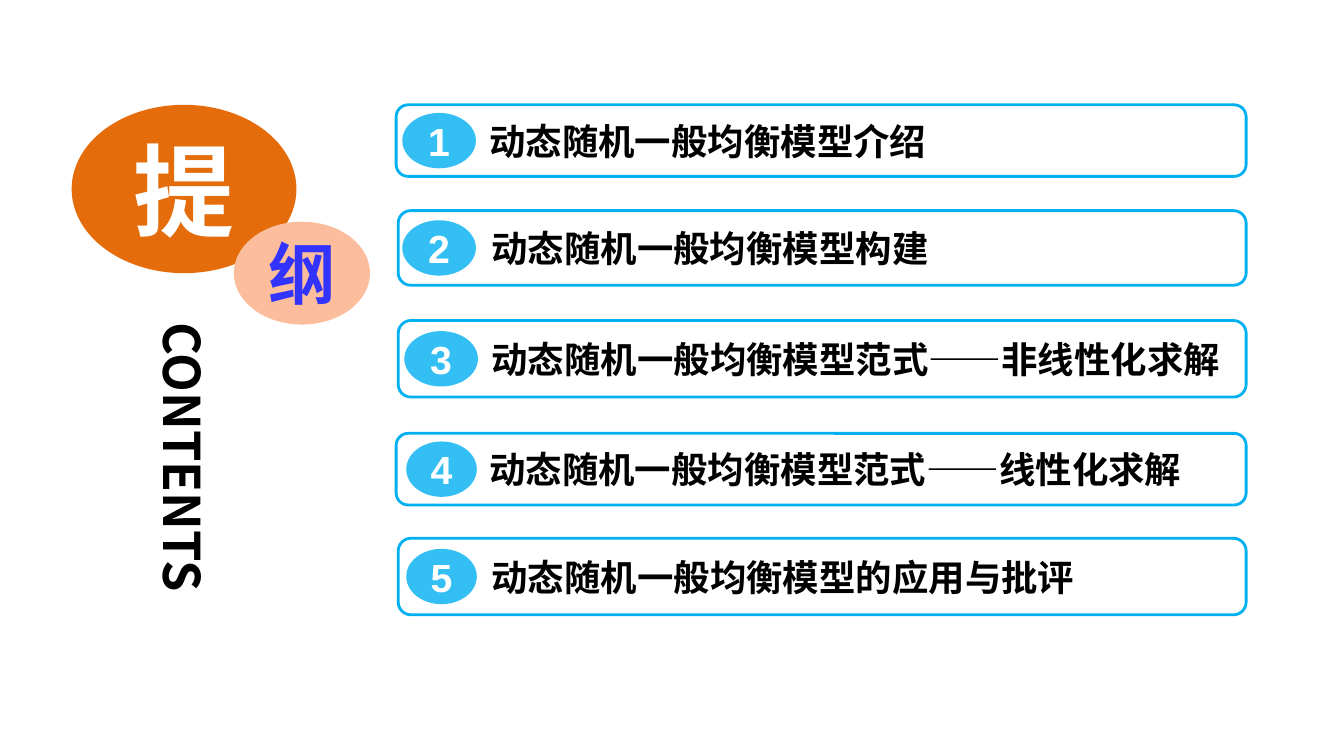
"""Build the outline slide: a round title, a vertical caption and five numbered topics."""
from pptx import Presentation
from pptx.dml.color import RGBColor
from pptx.enum.shapes import MSO_SHAPE
from pptx.enum.text import MSO_ANCHOR, PP_ALIGN
from pptx.oxml.ns import qn
from pptx.util import Inches, Pt
from lxml.etree import SubElement

THEME = {
    "white": "FFFFFF", "black": "000000", "blue": "00B0F0",
    "orange": "E46C0A", "peach": "FBBD9B", "violet": "3333FF",
    "chinese": "Noto Sans CJK SC", "digits": "Arial",
    "title": 72, "subtitle": 48, "caption": 36, "number": 28, "topic": 26,
}
TOPICS = [
    ("动态随机一般均衡模型介绍", 29.48, 13.87, 63.24, 9.47, 29.93, 5.48),
    ("动态随机一般均衡模型构建", 29.63, 27.87, 63.09, 9.87, 29.93, 5.48),
    ("动态随机一般均衡模型范式——非线性化求解", 29.63, 42.4, 63.09, 10.13, 30.08, 5.48),
    ("动态随机一般均衡模型范式——线性化求解", 29.48, 57.33, 63.24, 9.47, 30.23, 5.25),
    ("动态随机一般均衡模型的应用与批评", 29.63, 71.2, 63.09, 10.13, 30.23, 5.25),
]
DISC_HEIGHT = 7.33

deck = Presentation()
deck.slide_width, deck.slide_height = Inches(13.33), Inches(7.5)
page = deck.slides.add_slide(deck.slide_layouts[6])
column, row = deck.slide_width / 100, deck.slide_height / 100


def add_box(kind, left, top, width, height, fill):
    area = int(left * column), int(top * row), int(width * column), int(height * row)
    box = page.shapes.add_shape(kind, *area)
    box.shadow.inherit = False
    box.fill.solid()
    box.fill.fore_color.rgb = RGBColor.from_string(THEME[fill])
    box.line.fill.background()
    return box


def write(box, text, size, color, face="chinese", align=PP_ALIGN.CENTER, margin=None):
    frame = box.text_frame
    frame.word_wrap = True
    frame.vertical_anchor = MSO_ANCHOR.MIDDLE
    if margin is not None:
        frame.margin_left = frame.margin_right = margin
        frame.margin_top = frame.margin_bottom = margin
    para = frame.paragraphs[0]
    para.text = text
    para.alignment = align
    font = para.font
    font.name, font.size, font.bold = THEME[face], Pt(THEME[size]), True
    font.color.rgb = RGBColor.from_string(THEME[color])
    SubElement(font._element, qn("a:ea"), typeface=THEME[face])
    return para


for number, (topic, left, top, width, height, disc_left, disc_width) in enumerate(TOPICS, 1):
    bar = add_box(MSO_SHAPE.ROUNDED_RECTANGLE, left, top, width, height, "white")
    bar.line.color.rgb = RGBColor.from_string(THEME["blue"])
    bar.line.width = Pt(2)
    para = write(bar, topic, "topic", "black", align=PP_ALIGN.LEFT)
    para._p.get_or_add_pPr().set("indent", str(Inches(0.79)))

    disc_top = top + (height - DISC_HEIGHT) / 2
    disc = add_box(MSO_SHAPE.OVAL, disc_left, disc_top, disc_width, DISC_HEIGHT, "blue")
    color = disc.fill._xPr.find(qn("a:solidFill")).find(qn("a:srgbClr"))
    SubElement(color, qn("a:alpha"), val="80000")
    write(disc, str(number), "number", "white", face="digits")
    disc.text_frame.word_wrap = False

title = add_box(MSO_SHAPE.OVAL, 5.33, 13.87, 16.73, 22.27, "orange")
write(title, "提", "title", "white", margin=0)
subtitle = add_box(MSO_SHAPE.OVAL, 17.4, 29.33, 10.13, 13.6, "peach")
write(subtitle, "纲", "subtitle", "violet", margin=0)

caption = page.shapes.add_textbox(
    int(10.35 * column), int(42.67 * row), int(6.68 * column), int(40 * row))
write(caption, "CONTENTS", "caption", "black", align=PP_ALIGN.LEFT, margin=0)
caption.text_frame._txBody.bodyPr.set("vert", "eaVert")

deck.save("out.pptx")
